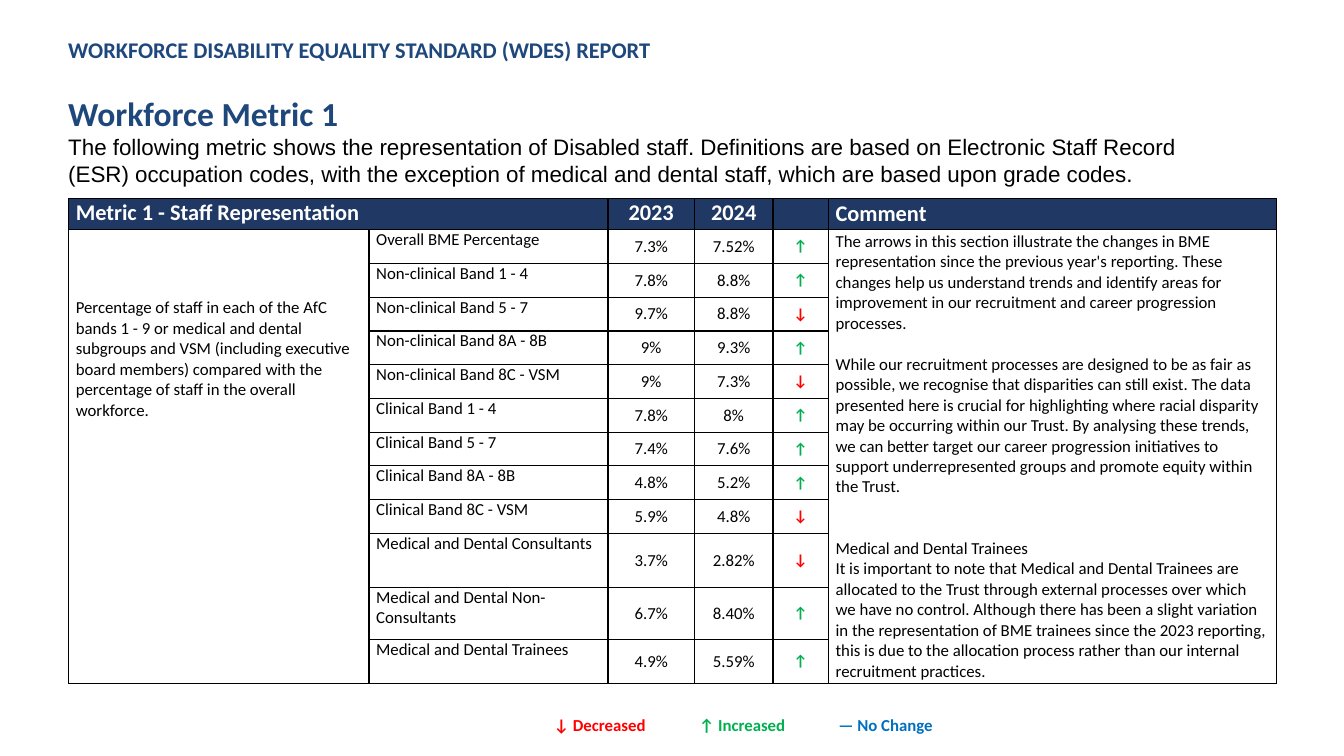
from lxml import etree
from pptx import Presentation
from pptx.dml.color import RGBColor
from pptx.enum.text import MSO_ANCHOR, PP_ALIGN
from pptx.oxml.ns import qn
from pptx.util import Cm, Pt

LEFT, CENTER = PP_ALIGN.LEFT, PP_ALIGN.CENTER
TOP, MIDDLE = MSO_ANCHOR.TOP, MSO_ANCHOR.MIDDLE
BLACK = RGBColor(0x00, 0x00, 0x00)
WHITE = RGBColor(0xFF, 0xFF, 0xFF)
NAVY = RGBColor(0x1F, 0x38, 0x64)
BLUE = RGBColor(0x1E, 0x47, 0x7C)
RED = RGBColor(0xFF, 0x00, 0x00)
GREEN = RGBColor(0x00, 0xB0, 0x50)
SKY = RGBColor(0x00, 0x70, 0xC0)
ARROW_COLORS = {"↑": GREEN, "↓": RED}

COL_WIDTHS = [7.57, 6.02, 2.18, 1.98, 1.4, 11.28]
ROW_HEIGHTS = [0.78] + [0.85] * 9 + [1.36, 1.31, 1.11]
STAFF_ROWS = [
    ("Overall BME Percentage", "7.3%", "7.52%", "↑"),
    ("Non-clinical Band 1 - 4", "7.8%", "8.8%", "↑"),
    ("Non-clinical Band 5 - 7", "9.7%", "8.8%", "↓"),
    ("Non-clinical Band 8A - 8B", "9%", "9.3%", "↑"),
    ("Non-clinical Band 8C - VSM", "9%", "7.3%", "↓"),
    ("Clinical Band 1 - 4", "7.8%", "8%", "↑"),
    ("Clinical Band 5 - 7", "7.4%", "7.6%", "↑"),
    ("Clinical Band 8A - 8B", "4.8%", "5.2%", "↑"),
    ("Clinical Band 8C - VSM", "5.9%", "4.8%", "↓"),
    ("Medical and Dental Consultants", "3.7%", "2.82%", "↓"),
    ("Medical and Dental Non-Consultants", "6.7%", "8.40%", "↑"),
    ("Medical and Dental Trainees", "4.9%", "5.59%", "↑"),
]
METRIC = (
    "Percentage of staff in each of the AfC bands 1 - 9 or medical and dental "
    "subgroups and VSM (including executive board members) compared with the "
    "percentage of staff in the overall workforce."
)
INTRO = (
    "The following metric shows the representation of Disabled staff. Definitions "
    "are based on Electronic Staff Record (ESR) occupation codes, with the exception "
    "of medical and dental staff, which are based upon grade codes."
)
# Each comment paragraph with the space before it, in points
COMMENTS = [
    ("The arrows in this section illustrate the changes in BME representation since "
     "the previous year's reporting. These changes help us understand trends and "
     "identify areas for improvement in our recruitment and career progression "
     "processes.", 0),
    ("While our recruitment processes are designed to be as fair as possible, we "
     "recognise that disparities can still exist. The data presented here is crucial "
     "for highlighting where racial disparity may be occurring within our Trust. By "
     "analysing these trends, we can better target our career progression initiatives "
     "to support underrepresented groups and promote equity within the Trust.", 14.6),
    ("Medical and Dental Trainees", 29.3),
    ("It is important to note that Medical and Dental Trainees are allocated to the "
     "Trust through external processes over which we have no control. Although there "
     "has been a slight variation in the representation of BME trainees since the 2023 "
     "reporting, this is due to the allocation process rather than our internal "
     "recruitment practices.", 0),
]
# Left edge, wording and colour of each legend entry
LEGEND = [(13.71, "↓ Decreased", RED), (17.37, "↑ Increased", GREEN),
          (20.88, "— No Change", SKY)]


class SlideBuilder:
    def __init__(self, s, font="Calibri"):
        self.s = s
        self.font = font

    def paragraph(self, tf, text, size, color, bold=False, font=None, align=LEFT, before=0):
        """Fill the first paragraph if it is still empty, else add one."""
        p = tf.paragraphs[0] if not tf.text else tf.add_paragraph()
        if text:
            p.add_run().text = text
        p.alignment = align
        p.space_before = Pt(before)
        f = p.font
        f.name, f.size, f.bold = font or self.font, Pt(size), bold
        f.color.rgb = color

    def text_box(self, left, top, width, height):
        tf = self.s.shapes.add_textbox(Cm(left), Cm(top), Cm(width), Cm(height)).text_frame
        tf.word_wrap = True
        return tf

    def table(self, left, top, widths, heights):
        table = self.s.shapes.add_table(
            len(heights), len(widths), Cm(left), Cm(top),
            Cm(sum(widths)), Cm(sum(heights))).table
        table.first_row = table.horz_banding = False
        for column, width in zip(table.columns, widths):
            column.width = Cm(width)
        for row, height in zip(table.rows, heights):
            row.height = Cm(height)
        for cell in table.iter_cells():
            cell.fill.background()
            cell.margin_left = cell.margin_right = Cm(0.18)
            cell.margin_top = cell.margin_bottom = 0
            self.borders(cell)
        return table

    def borders(self, cell):
        tc_pr = cell._tc.get_or_add_tcPr()
        for i, side in enumerate(("a:lnL", "a:lnR", "a:lnT", "a:lnB")):
            ln = etree.Element(qn(side), w=str(Pt(1)))
            fill = etree.SubElement(ln, qn("a:solidFill"))
            etree.SubElement(fill, qn("a:srgbClr"), val=str(BLACK))
            tc_pr.insert(i, ln)

    def cell(self, cell, text, size=12, color=BLACK, anchor=TOP, fill=None, **options):
        cell.vertical_anchor = anchor
        if fill is not None:
            cell.fill.solid()
            cell.fill.fore_color.rgb = fill
        self.paragraph(cell.text_frame, text, size, color, **options)


def main():
    prs = Presentation()
    prs.slide_width, prs.slide_height = Cm(33.87), Cm(19.05)
    b = SlideBuilder(prs.slides.add_slide(prs.slide_layouts[6]))

    heading = b.text_box(1.47, 0.79, 28.9, 4.11)
    b.paragraph(heading, "WORKFORCE DISABILITY EQUALITY STANDARD (WDES) REPORT",
                16, BLUE, bold=True)
    b.paragraph(heading, "Workforce Metric 1", 24, BLUE, bold=True, before=21.5)
    b.paragraph(heading, INTRO, 16, BLACK, font="Arial")

    table = b.table(1.73, 5.01, COL_WIDTHS, ROW_HEIGHTS)
    table.cell(0, 0).merge(table.cell(0, 1))
    for col in (0, 5):
        table.cell(1, col).merge(table.cell(len(STAFF_ROWS), col))

    headers = [(0, "Metric 1 - Staff Representation", LEFT, TOP), (2, "2023", CENTER, TOP),
               (3, "2024", CENTER, TOP), (4, "", CENTER, TOP), (5, "Comment", LEFT, MIDDLE)]
    for col, text, align, anchor in headers:
        b.cell(table.cell(0, col), text, 16, WHITE, anchor, NAVY, bold=True, align=align)

    b.cell(table.cell(1, 0), METRIC)
    table.cell(1, 0).margin_top = Cm(1.72)
    for row, (group, last_year, this_year, arrow) in enumerate(STAFF_ROWS, start=1):
        b.cell(table.cell(row, 1), group)
        for col, value in ((2, last_year), (3, this_year)):
            b.cell(table.cell(row, col), value, anchor=MIDDLE, align=CENTER)
        b.cell(table.cell(row, 4), arrow, 11, ARROW_COLORS[arrow], MIDDLE,
               bold=True, align=CENTER)
    for text, before in COMMENTS:
        b.cell(table.cell(1, 5), text, anchor=MIDDLE, before=before)

    for left, text, color in LEGEND:
        b.paragraph(b.text_box(left, 17.88, 3.4, 0.76), text, 12, color, bold=True)

    prs.save("out.pptx")


if __name__ == "__main__":
    main()
